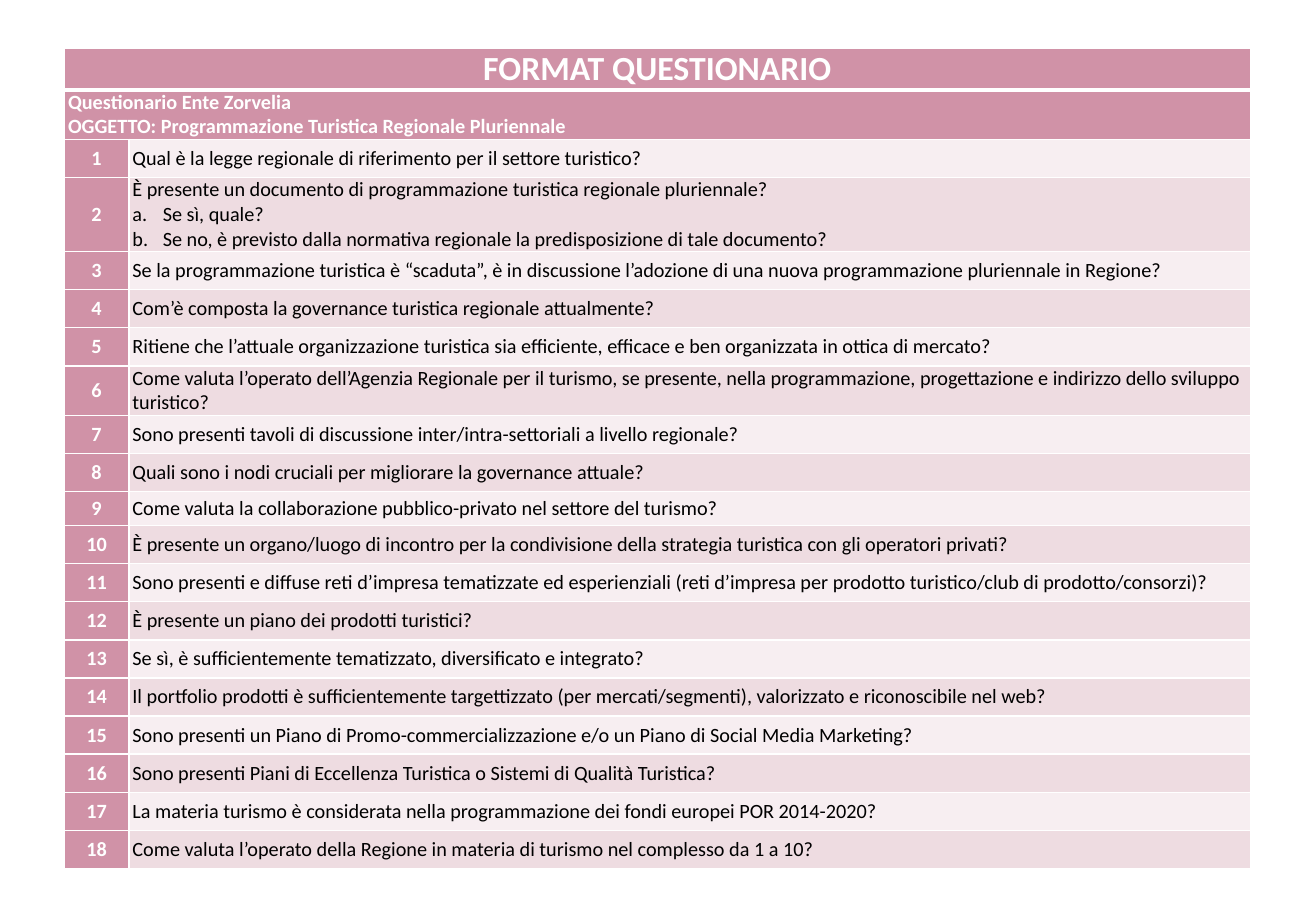
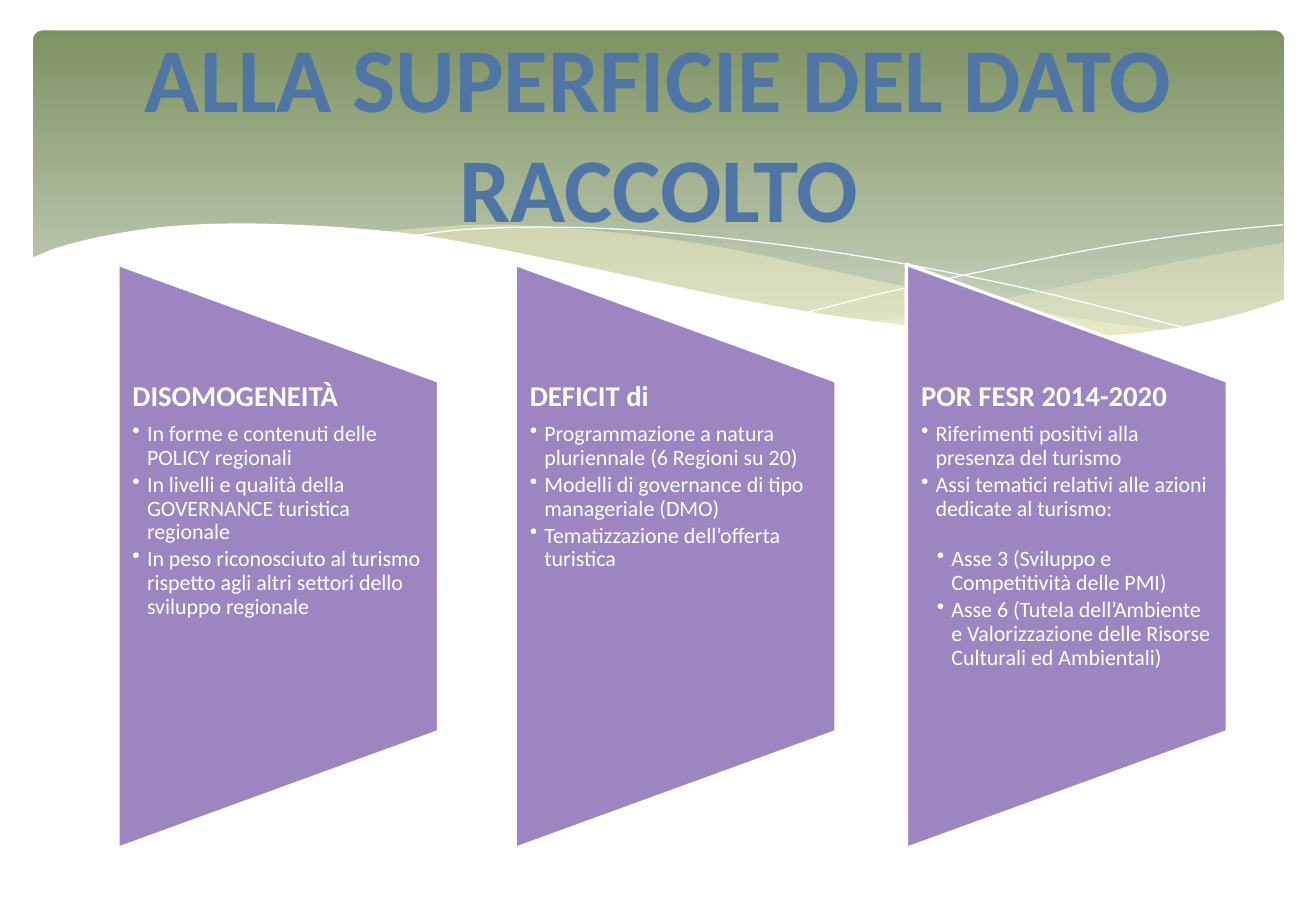
from lxml.etree import SubElement
from pptx import Presentation
from pptx.dml.color import RGBColor
from pptx.enum.shapes import MSO_SHAPE
from pptx.enum.text import MSO_ANCHOR, PP_ALIGN
from pptx.oxml.ns import qn
from pptx.util import Inches, Pt

FONT = "Calibri"
WHITE = RGBColor(0xFF, 0xFF, 0xFF)
BLACK = RGBColor(0, 0, 0)
ROSE = RGBColor(0xD0, 0x92, 0xA7)
PALE = RGBColor(0xF7, 0xEE, 0xF1)
BLUSH = RGBColor(0xEE, 0xDC, 0xE1)
GREEN = RGBColor(0x7D, 0x92, 0x63)
SAGE = RGBColor(0xC9, 0xD3, 0xBE)
CREAM = RGBColor(0xFE, 0xFA, 0xC9)
BLUE = RGBColor(0x4E, 0x75, 0xA3)
PURPLE = RGBColor(0x9C, 0x85, 0xC0)

TITLE = "FORMAT QUESTIONARIO"
SUBJECT = (
    "Questionario Ente Zorvelia",
    "OGGETTO: Programmazione Turistica Regionale Pluriennale",
)
# A question is its text, followed by any lettered sub-questions.
QUESTIONS = (
    ("Qual è la legge regionale di riferimento per il settore turistico?",),
    ("È presente un documento di programmazione turistica regionale pluriennale?",
     "Se sì, quale?",
     "Se no, è previsto dalla normativa regionale la predisposizione di tale documento?"),
    ("Se la programmazione turistica è “scaduta”, è in discussione l’adozione di una "
     "nuova programmazione pluriennale in Regione?",),
    ("Com’è composta la governance turistica regionale attualmente?",),
    ("Ritiene che l’attuale organizzazione turistica sia efficiente, efficace e ben "
     "organizzata in ottica di mercato?",),
    ("Come valuta l’operato dell’Agenzia Regionale per il turismo, se presente, nella "
     "programmazione, progettazione e indirizzo dello sviluppo turistico?",),
    ("Sono presenti tavoli di discussione inter/intra-settoriali a livello regionale?",),
    ("Quali sono i nodi cruciali per migliorare la governance attuale?",),
    ("Come valuta la collaborazione pubblico-privato nel settore del turismo?",),
    ("È presente un organo/luogo di incontro per la condivisione della strategia "
     "turistica con gli operatori privati?",),
    ("Sono presenti e diffuse reti d’impresa tematizzate ed esperienziali (reti "
     "d’impresa per prodotto turistico/club di prodotto/consorzi)?",),
    ("È presente un piano dei prodotti turistici?",),
    ("Se sì, è sufficientemente tematizzato, diversificato e integrato?",),
    ("Il portfolio prodotti è sufficientemente targettizzato (per mercati/segmenti), "
     "valorizzato e riconoscibile nel web?",),
    ("Sono presenti un Piano di Promo-commercializzazione e/o un Piano di Social "
     "Media Marketing?",),
    ("Sono presenti Piani di Eccellenza Turistica o Sistemi di Qualità Turistica?",),
    ("La materia turismo è considerata nella programmazione dei fondi europei POR "
     "2014-2020?",),
    ("Come valuta l’operato della Regione in materia di turismo nel complesso da 1 a 10?",),
)

# Left edge, heading, points, sub-points.
PANELS = (
    (0.97, "DISOMOGENEITÀ",
     ("In forme e contenuti delle POLICY regionali",
      "In livelli e qualità della GOVERNANCE turistica regionale",
      "In peso riconosciuto al turismo rispetto agli altri settori dello sviluppo "
      "regionale"), ()),
    (4.24, "DEFICIT di",
     ("Programmazione a natura pluriennale (6 Regioni su 20)",
      "Modelli di governance di tipo manageriale (DMO)",
      "Tematizzazione dell’offerta turistica"), ()),
    (7.46, "POR FESR 2014-2020",
     ("Riferimenti positivi alla presenza del turismo",
      "Assi tematici relativi alle azioni dedicate al turismo:"),
     ("Asse 3 (Sviluppo e Competitività delle PMI)",
      "Asse 6 (Tutela dell’Ambiente e Valorizzazione delle Risorse Culturali ed "
      "Ambientali)")),
)

TINTS = (
    (29, [(10.56, 2), (9.82, 2.13), (9.02, 2.3), (8.16, 2.48), (7.16, 2.65)],
     [(7.16, 2.65), (7.78, 2.72), (8.33, 2.77), (8.93, 2.77), (9.54, 2.73),
      (10.06, 2.63), (10.57, 2.47)]),
    (40, [(9.67, 2.73), (8.74, 2.6), (7.65, 2.4), (6.81, 2.22), (6.01, 2.05),
          (5.29, 1.94), (4.55, 1.87), (3.91, 1.85), (3.1, 1.91)],
     [(3.1, 1.91), (3.92, 2.03), (4.87, 2.22), (5.74, 2.4), (6.87, 2.61),
      (7.83, 2.74), (8.74, 2.78), (9.67, 2.73)]),
)
STRANDS = (
    [(3.35, 1.95), (3.82, 1.89), (4.51, 1.87), (5.3, 1.9), (6.3, 2), (7.2, 2.13),
     (8.24, 2.33), (9, 2.51), (9.83, 2.72)],
    [(6.65, 2.57), (7.28, 2.41), (8.1, 2.23), (9.06, 2.04), (9.86, 1.92), (10.56, 1.85)],
)
EDGE = [(0.25, 2.13), (0.5, 2.03), (0.92, 1.93), (1.43, 1.86), (2.09, 1.84),
        (2.93, 1.88), (3.68, 1.97), (4.84, 2.2), (6.01, 2.45), (7.01, 2.62),
        (8.06, 2.74), (8.92, 2.77), (9.61, 2.71), (10.18, 2.59), (10.59, 2.46)]
FOOT = [(10.59, 3.29), (0.25, 3.29)]


def style(par, size, color, bold=False, align=PP_ALIGN.LEFT):
    par.alignment = align
    font = par.font
    font.name, font.size, font.bold = FONT, Pt(size), bold
    font.color.rgb = color


def bullet(par, left, hang, tag, **attrs):
    """Give the paragraph a hanging bullet; call before style()."""
    props = par._p.get_or_add_pPr()
    props.set("marL", str(Inches(left)))
    props.set("indent", str(-Inches(hang)))
    SubElement(props, qn(tag), **attrs)


def fill_pars(frame, texts):
    """Write one paragraph for each text and return them."""
    pars = [frame.paragraphs[0]]
    pars += [frame.add_paragraph() for _ in texts[1:]]
    for par, text in zip(pars, texts):
        par.text = text
    return pars


def border(cell, thick):
    """Draw white borders, 1 pt wide except on the sides in thick."""
    props = cell._tc.get_or_add_tcPr()
    for side in "LRTB":
        line = SubElement(props, qn(f"a:ln{side}"), w=str(Pt(thick.get(side, 1))))
        solid = SubElement(line, qn("a:solidFill"))
        SubElement(solid, qn("a:srgbClr"), val=str(WHITE))


def write(cell, texts, fill, size=12, color=WHITE, bold=True, align=PP_ALIGN.LEFT):
    cell.margin_left = cell.margin_right = Inches(0.03)
    cell.margin_top = cell.margin_bottom = 0
    cell.vertical_anchor = MSO_ANCHOR.MIDDLE
    cell.fill.solid()
    cell.fill.fore_color.rgb = fill
    for i, par in enumerate(fill_pars(cell.text_frame, texts)):
        if i and color == BLACK:
            bullet(par, 0.25, 0.25, "a:buAutoNum", type="alphaLcPeriod")
        style(par, size, color, bold, align)


def add_form(slide):
    count = len(QUESTIONS) + 2
    table = slide.shapes.add_table(
        count, 2, Inches(0.53), Inches(0.4), Inches(9.76), Inches(6.28)).table
    table.first_row = table.horz_banding = False
    table.columns[0].width = Inches(0.53)
    table.columns[1].width = Inches(9.23)
    table.rows[10].height = Inches(0.28)
    thick = {0: {"B": 3}, 1: {"T": 3}}
    for row in range(count):
        for col in range(2):
            border(table.cell(row, col), thick.get(row, {}))
    for row in range(2):
        table.cell(row, 0).merge(table.cell(row, 1))
    write(table.cell(0, 0), (TITLE,), ROSE, 20, align=PP_ALIGN.CENTER)
    write(table.cell(1, 0), SUBJECT, ROSE)
    for num, texts in enumerate(QUESTIONS, 1):
        write(table.cell(num + 1, 0), (str(num),), ROSE, align=PP_ALIGN.CENTER)
        write(table.cell(num + 1, 1), texts, PALE if num % 2 else BLUSH,
              color=BLACK, bold=False)


def bend(points, steps=8):
    """Return a smooth run of points (Catmull-Rom) through those given."""
    ends = [points[0], *points, points[-1]]
    curve = []
    for knots in zip(ends, ends[1:], ends[2:], ends[3:]):
        for i in range(steps):
            t = i / steps
            curve.append(tuple(
                q + t / 2 * (r - p + t * (2*p - 5*q + 4*r - s + t * (3*q - p - 3*r + s)))
                for p, q, r, s in zip(*knots)))
    return curve + [points[-1]]


def outline(slide, points, close=True):
    spots = [(Inches(x), Inches(y)) for x, y in points]
    pen = slide.shapes.build_freeform(*spots[0])
    pen.add_line_segments(spots[1:], close=close)
    shape = pen.convert_to_shape()
    shape.shadow.inherit = False
    return shape


def add_wave(slide, points, color, alpha=100):
    shape = outline(slide, points)
    shape.line.fill.background()
    shape.fill.solid()
    shape.fill.fore_color.rgb = color
    if alpha < 100:
        tone = shape._element.spPr.find(qn("a:solidFill"))[0]
        SubElement(tone, qn("a:alpha"), val=str(alpha * 1000))


def add_strand(slide, points):
    shape = outline(slide, bend(points), close=False)
    shape.fill.background()
    shape.line.color.rgb = WHITE
    shape.line.width = Pt(0)


def add_band(slide):
    band = slide.shapes.add_shape(
        MSO_SHAPE.ROUNDED_RECTANGLE, Inches(0.27), Inches(0.25), Inches(10.3), Inches(2.7))
    band.adjustments[0] = 0.03
    band.shadow.inherit = False
    band.line.fill.background()
    band.fill.gradient()
    band.fill.gradient_angle = 270
    for stop, color, place in zip(band.fill.gradient_stops, (GREEN, SAGE), (0, 0.9)):
        stop.color.rgb = color
        stop.position = place
    for alpha, top, low in TINTS:
        add_wave(slide, bend(top) + bend(low), CREAM, alpha)
    for points in STRANDS:
        add_strand(slide, points)
    add_wave(slide, bend(EDGE) + FOOT, WHITE)


def add_text(slide, left, top, width, height):
    box = slide.shapes.add_textbox(Inches(left), Inches(top), Inches(width), Inches(height))
    box.text_frame.word_wrap = True
    return box.text_frame


def add_panel(slide, left, head, points, axes):
    wide, high, mid = 2.64, 4.81, 4.58
    # The shape is turned a quarter, so its sides are swapped.
    shape = slide.shapes.add_shape(
        MSO_SHAPE.FLOWCHART_MANUAL_OPERATION, Inches(left + (wide - high) / 2),
        Inches(mid - wide / 2), Inches(high), Inches(wide))
    shape.rotation = 270
    shape.shadow.inherit = False
    shape.fill.solid()
    shape.fill.fore_color.rgb = PURPLE
    shape.line.color.rgb = WHITE
    shape.line.width = Pt(2)

    frame = add_text(slide, left, 3.14, wide, 2.89)
    frame.margin_left = frame.margin_right = Inches(0.12)
    frame.margin_top = frame.margin_bottom = 0
    first, *rest = fill_pars(frame, (head, *points, *axes))
    first.line_spacing = 0.9
    first.space_after = Pt(6)
    style(first, 17, WHITE, True)
    for i, par in enumerate(rest):
        par.level = 1 if i < len(points) else 2
        bullet(par, 0.12 if par.level == 1 else 0.25, 0.12, "a:buChar", char="•")
        par.line_spacing = 0.9
        par.space_before = Pt(14 if i == len(points) else 0)
        par.space_after = Pt(2)
        style(par, 13, WHITE)


def main():
    deck = Presentation()
    deck.slide_width, deck.slide_height = Inches(10.83), Inches(7.5)
    form, data = [deck.slides.add_slide(deck.slide_layouts[6]) for _ in range(2)]

    add_form(form)

    add_band(data)
    title = add_text(data, 0.26, 0.13, 10.32, 1.92).paragraphs[0]
    title.text = "ALLA SUPERFICIE DEL DATO RACCOLTO"
    style(title, 54, BLUE, True, PP_ALIGN.CENTER)
    for panel in PANELS:
        add_panel(data, *panel)

    deck.save("out.pptx")


if __name__ == "__main__":
    main()
